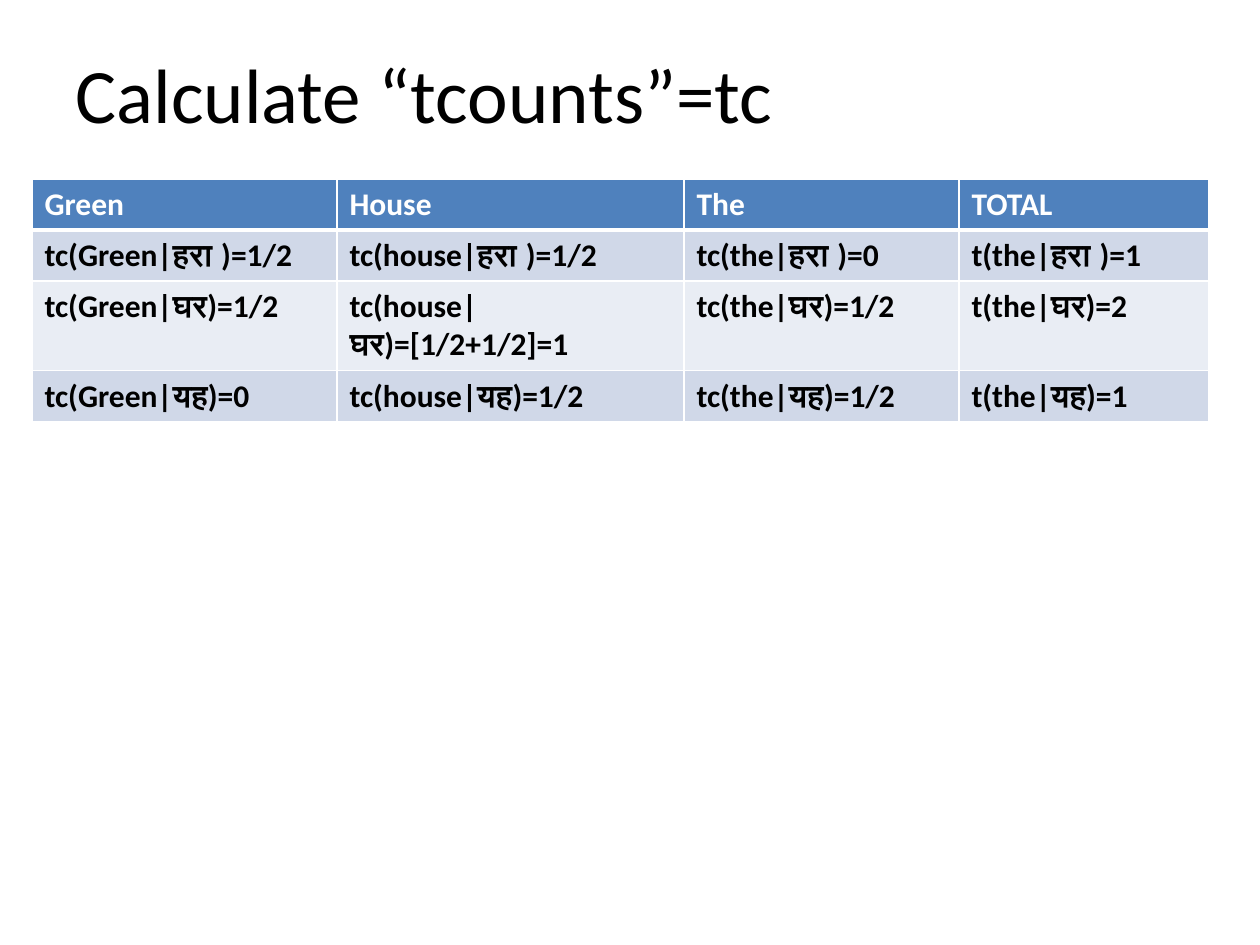
from lxml.etree import SubElement
from pptx import Presentation
from pptx.dml.color import RGBColor
from pptx.enum.text import MSO_ANCHOR, PP_ALIGN
from pptx.oxml.ns import qn
from pptx.util import Pt

EMU_PER_PX = 914400 / 126
COLUMN_WIDTHS = [305, 347, 275, 250]
ROW_HEIGHT = 51
HEADER_FILL = "4F81BD"
BAND_FILLS = ["D0D8E8", "E9EDF4"]
COUNTS = [
    ["Green", "House", "The", "TOTAL"],
    ["tc(Green|हरा )=1/2", "tc(house|हरा )=1/2", "tc(the|हरा )=0", "t(the|हरा )=1"],
    ["tc(Green|घर)=1/2", "tc(house|घर)=[1/2+1/2]=1", "tc(the|घर)=1/2", "t(the|घर)=2"],
    ["tc(Green|यह)=0", "tc(house|यह)=1/2", "tc(the|यह)=1/2", "t(the|यह)=1"],
]


def px(length):
    return round(length * EMU_PER_PX)


def color(hex_code):
    return RGBColor.from_string(hex_code)


def write(frame, text, size=18, bold=False, ink="000000"):
    paragraph = frame.paragraphs[0]
    paragraph.alignment = PP_ALIGN.LEFT
    run = paragraph.add_run()
    run.text = text
    run.font.name = "Calibri"
    run.font.size = Pt(size)
    run.font.bold = bold
    run.font.color.rgb = color(ink)


def add_border(cell, side, points):
    line = SubElement(cell._tc.get_or_add_tcPr(), qn(f"a:{side}"), w=str(Pt(points)))
    fill = SubElement(line, qn("a:solidFill"))
    SubElement(fill, qn("a:srgbClr"), val="FFFFFF")


def format_cell(cell, text, row):
    header = row == 0
    widths = {"lnL": 1, "lnR": 1, "lnT": 3 if row == 1 else 1, "lnB": 3 if header else 1}
    for side, points in widths.items():
        add_border(cell, side, points)
    cell.fill.solid()
    cell.fill.fore_color.rgb = color(HEADER_FILL if header else BAND_FILLS[(row - 1) % 2])
    write(cell.text_frame, text, bold=True, ink="FFFFFF" if header else "000000")


def add_title(slide, text):
    title = slide.shapes.title
    title.left, title.top, title.width, title.height = map(px, (63, 38, 1134, 109))
    title.text_frame.vertical_anchor = MSO_ANCHOR.MIDDLE
    write(title.text_frame, text, size=44)


def add_counts_table(slide, left, top):
    counts = slide.shapes.add_table(
        len(COUNTS), len(COLUMN_WIDTHS), px(left), px(top),
        px(sum(COLUMN_WIDTHS)), px(ROW_HEIGHT * len(COUNTS))).table
    for column, width in zip(counts.columns, COLUMN_WIDTHS):
        column.width = px(width)
    for row, texts in enumerate(COUNTS):
        counts.rows[row].height = px(ROW_HEIGHT)
        for column, text in enumerate(texts):
            format_cell(counts.cell(row, column), text, row)


def main():
    presentation = Presentation()
    presentation.slide_width, presentation.slide_height = px(1260), px(945)
    slide = presentation.slides.add_slide(presentation.slide_layouts[5])
    add_title(slide, "Calculate “tcounts”=tc")
    add_counts_table(slide, left=32, top=179)
    presentation.save("out.pptx")


if __name__ == "__main__":
    main()
